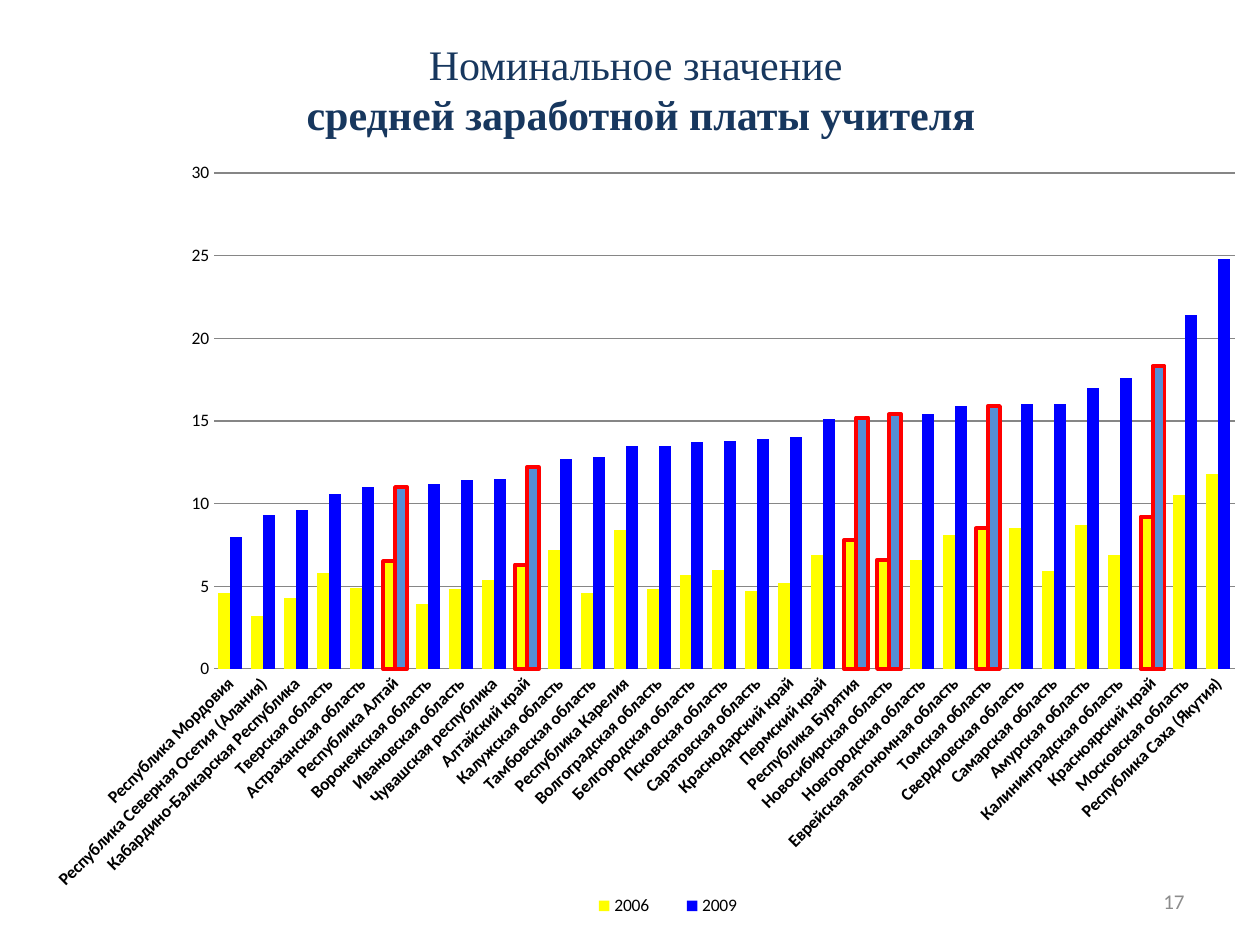
from lxml.etree import SubElement
from pptx import Presentation
from pptx.chart.data import CategoryChartData
from pptx.dml.color import RGBColor
from pptx.enum.chart import XL_CHART_TYPE as Chart, XL_LEGEND_POSITION as Legend, XL_TICK_MARK as Tick
from pptx.enum.text import MSO_ANCHOR as Anchor, PP_ALIGN as Align
from pptx.oxml.ns import qn
from pptx.util import Pt

PX = 914400 // 126
CHART_W, CHART_H = 1231, 798


def rgb(value):
    return RGBColor.from_string(value)


def place(parent, x, y, w, h, inner=False):
    """Fix the plot area or legend at a box in px from the chart's corner."""
    layout = parent.find(qn("c:layout"))
    if layout is None:
        layout = SubElement(parent, qn("c:layout"))
        position = parent.find(qn("c:legendPos"))
        if position is None:
            parent.insert(0, layout)
        else:
            position.addnext(layout)
    manual = SubElement(layout, qn("c:manualLayout"))
    if inner:
        SubElement(manual, qn("c:layoutTarget")).set("val", "inner")
    for side in "xy":
        SubElement(manual, qn(f"c:{side}Mode")).set("val", "edge")
    for side, length, whole in zip("xywh", (x, y, w, h), (CHART_W, CHART_H) * 2):
        SubElement(manual, qn(f"c:{side}")).set("val", str(length / whole))


REGIONS = [
    ("Республика Мордовия", 4.6, 8),
    ("Республика Северная Осетия (Алания)", 3.2, 9.3),
    ("Кабардино-Балкарская Республика", 4.3, 9.6),
    ("Тверская область", 5.8, 10.6),
    ("Астраханская область", 4.9, 11),
    ("Республика Алтай", 6.5, 11),
    ("Воронежская область", 3.9, 11.2),
    ("Ивановская область", 4.8, 11.4),
    ("Чувашская республика", 5.4, 11.5),
    ("Алтайский край", 6.3, 12.2),
    ("Калужская область", 7.2, 12.7),
    ("Тамбовская область", 4.6, 12.8),
    ("Республика Карелия", 8.4, 13.5),
    ("Волгоградская область", 4.8, 13.5),
    ("Белгородская область", 5.7, 13.7),
    ("Псковская область", 6, 13.8),
    ("Саратовская область", 4.7, 13.9),
    ("Краснодарский край", 5.2, 14),
    ("Пермский край", 6.9, 15.1),
    ("Республика Бурятия", 7.8, 15.2),
    ("Новосибирская область", 6.6, 15.4),
    ("Новгородская область", 6.6, 15.4),
    ("Еврейская автономная область", 8.1, 15.9),
    ("Томская область", 8.5, 15.9),
    ("Свердловская область", 8.5, 16),
    ("Самарская область", 5.9, 16),
    ("Амурская область", 8.7, 17),
    ("Калининградская область", 6.9, 17.6),
    ("Красноярский край", 9.2, 18.3),
    ("Московская область", 10.5, 21.4),
    ("Республика Саха (Якутия)", 11.8, 24.8),
]
HIGHLIGHTED = ["Республика Алтай", "Алтайский край", "Республика Бурятия",
               "Новосибирская область", "Томская область", "Красноярский край"]

prs = Presentation()
prs.slide_width, prs.slide_height = 1260 * PX, 945 * PX
s = prs.slides.add_slide(prs.slide_layouts[6])

# Title
tf = s.shapes.add_textbox(-10 * PX, 32 * PX, 1302 * PX, 175 * PX).text_frame
tf.word_wrap = True
tf.text = "Номинальное значение \nсредней заработной платы учителя"
for p, bold in zip(tf.paragraphs, (False, True)):
    p.alignment = Align.CENTER
    p.font.name, p.font.size, p.font.bold = "Times New Roman", Pt(24), bold
    p.font.color.rgb = rgb("17375E")

# Chart
names, pay_2006, pay_2009 = zip(*REGIONS)
data = CategoryChartData()
data.categories = names
data.add_series("2006", pay_2006)
data.add_series("2009", pay_2009)
chart = s.shapes.add_chart(Chart.COLUMN_CLUSTERED, 29 * PX, 147 * PX,
                           CHART_W * PX, CHART_H * PX, data).chart
chart.has_title = False
chart.font.name, chart.font.size = "Calibri", Pt(10)
chart.font.color.rgb = rgb("000000")

plot = chart.plots[0]
plot.gap_width, plot.overlap = 75, 0
plot.vary_by_categories = False
for series, color, accent in zip(plot.series, ("FFFF00", "0000FF"), ("FFFF00", "558ED5")):
    series.format.fill.solid()
    series.format.fill.fore_color.rgb = rgb(color)
    for name in HIGHLIGHTED:
        bar = series.points[names.index(name)].format
        bar.fill.solid()
        bar.fill.fore_color.rgb = rgb(accent)
        bar.line.color.rgb = rgb("FF0000")
        bar.line.width = Pt(2.25)

regions, pay = chart.category_axis, chart.value_axis
for axis in (regions, pay):
    axis.major_tick_mark = axis.minor_tick_mark = Tick.NONE
regions.tick_labels.font.bold = True
regions.tick_labels.font.size = Pt(10)
regions.format.line.color.rgb = rgb("868686")
regions._element.find(qn("c:txPr")).find(qn("a:bodyPr")).set("rot", "-2700000")
pay.minimum_scale, pay.maximum_scale, pay.major_unit = 0, 30, 5
pay.format.line.fill.background()
pay.major_gridlines.format.line.color.rgb = rgb("868686")
pay.major_gridlines.format.line.width = Pt(0.75)

chart.has_legend = True
chart.legend.position = Legend.BOTTOM
chart.legend.include_in_layout = False
place(chart.legend._element, 538, 739, 202, 40)
place(plot._element.getparent(), 185, 26, 1021, 496, inner=True)

# Slide number
tf = s.shapes.add_textbox(903 * PX, 876 * PX, 294 * PX, 50 * PX).text_frame
tf.word_wrap = True
tf.vertical_anchor = Anchor.MIDDLE
p = tf.paragraphs[0]
p.text = "17"
p.alignment = Align.RIGHT
p.font.name, p.font.size = "Calibri", Pt(12)
p.font.color.rgb = rgb("8C8C8C")

prs.save("out.pptx")
